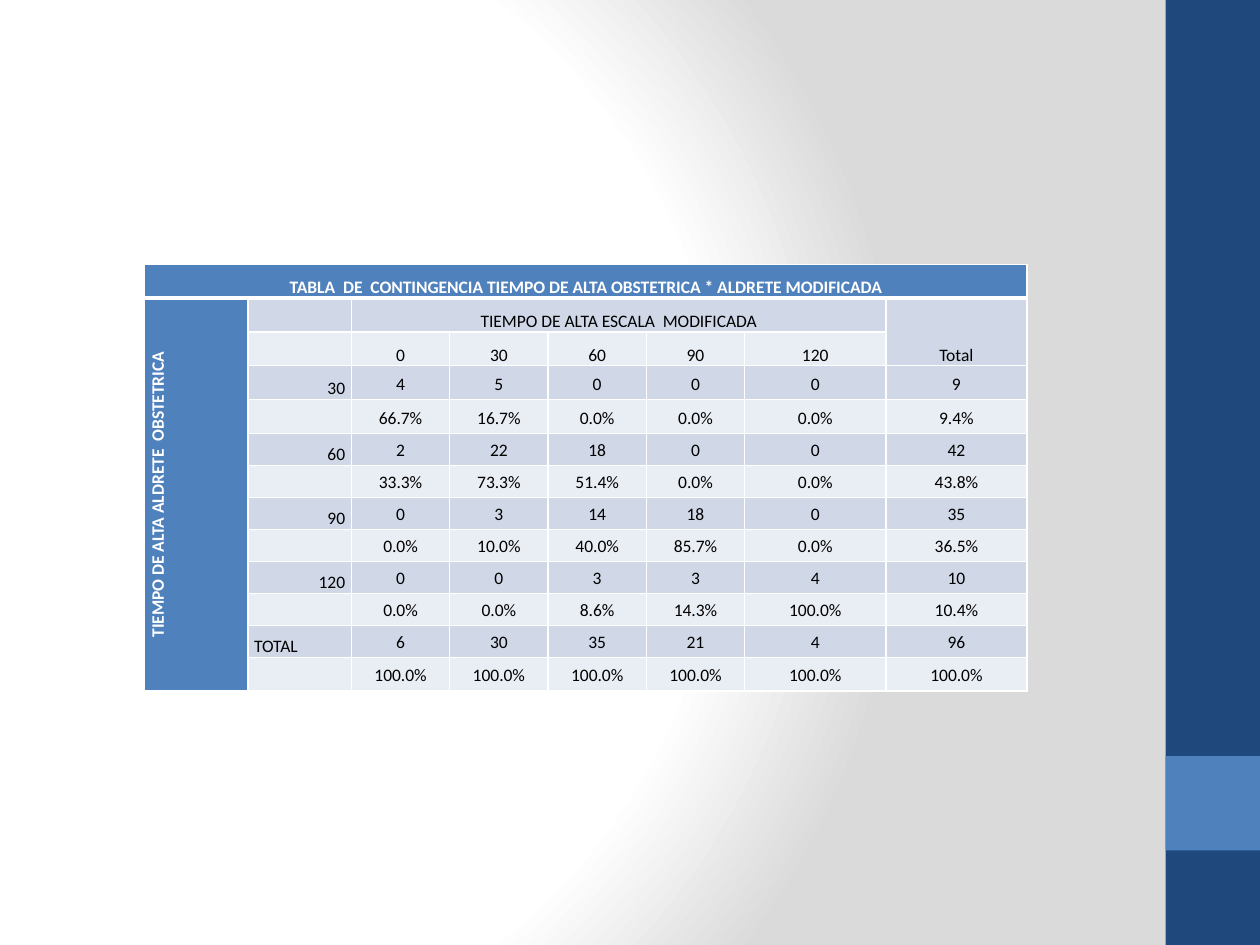
"""Build a slide with the contingency table of discharge times."""
import lxml.etree
import pptx
import pptx.dml.color
import pptx.enum.shapes
import pptx.enum.text
import pptx.oxml
import pptx.oxml.ns
import pptx.util

Pt = pptx.util.Pt
RGBColor = pptx.dml.color.RGBColor
Align = pptx.enum.text.PP_ALIGN
Anchor = pptx.enum.text.MSO_ANCHOR

WHITE = RGBColor(0xFF, 0xFF, 0xFF)
BLACK = RGBColor(0x00, 0x00, 0x00)
GREY = RGBColor(0xDA, 0xDA, 0xDA)
NAVY = RGBColor(0x1F, 0x49, 0x7D)
BLUE = RGBColor(0x4F, 0x81, 0xBD)
DARK_BAND = RGBColor(0xD0, 0xD8, 0xE8)
LIGHT_BAND = RGBColor(0xE9, 0xED, 0xF4)

TITLE = "TABLA  DE  CONTINGENCIA TIEMPO DE ALTA OBSTETRICA * ALDRETE MODIFICADA"
SIDE_TITLE = "TIEMPO DE ALTA ALDRETE  OBSTETRICA"
ROWS = [
    [TITLE, "", "", "", "", "", "", ""],
    [SIDE_TITLE, "", "TIEMPO DE ALTA ESCALA  MODIFICADA", "", "", "", "", "Total"],
    ["", "", "0", "30", "60", "90", "120", ""],
    ["", "30", "4", "5", "0", "0", "0", "9"],
    ["", "", "66.7%", "16.7%", "0.0%", "0.0%", "0.0%", "9.4%"],
    ["", "60", "2", "22", "18", "0", "0", "42"],
    ["", "", "33.3%", "73.3%", "51.4%", "0.0%", "0.0%", "43.8%"],
    ["", "90", "0", "3", "14", "18", "0", "35"],
    ["", "", "0.0%", "10.0%", "40.0%", "85.7%", "0.0%", "36.5%"],
    ["", "120", "0", "0", "3", "3", "4", "10"],
    ["", "", "0.0%", "0.0%", "8.6%", "14.3%", "100.0%", "10.4%"],
    ["", "TOTAL", "6", "30", "35", "21", "4", "96"],
    ["", "", "100.0%", "100.0%", "100.0%", "100.0%", "100.0%", "100.0%"],
]
COLUMN_WIDTHS = [59.2] * 2 + [56.2] * 4 + [80.7] * 2
ROW_HEIGHTS = [19.35] * 5 + [18.3] * 7 + [19.35]
MERGES = [(0, 0, 0, 7), (1, 0, 12, 0), (1, 2, 1, 6), (1, 7, 2, 7)]


def add_border(cell, side, width):
    properties = cell._tc.get_or_add_tcPr()
    line = lxml.etree.SubElement(
        properties, pptx.oxml.ns.qn(f"a:{side}"), w=str(Pt(width)))
    fill = lxml.etree.SubElement(line, pptx.oxml.ns.qn("a:solidFill"))
    lxml.etree.SubElement(fill, pptx.oxml.ns.qn("a:srgbClr"), val=str(WHITE))


presentation = pptx.Presentation()
presentation.slide_width = Pt(720)
presentation.slide_height = Pt(540)
slide = presentation.slides.add_slide(presentation.slide_layouts[6])

slide.background.fill.solid()
background = slide.background._cSld.bg.bgPr
stops = "".join(
    f'<a:gs pos="{position}"><a:srgbClr val="{color}"/></a:gs>'
    for position, color in [(0, WHITE), (75000, WHITE), (100000, GREY)])
gradient = pptx.oxml.parse_xml(
    f'<a:gradFill {pptx.oxml.ns.nsdecls("a")} rotWithShape="1">'
    f'<a:gsLst>{stops}</a:gsLst><a:path path="circle">'
    '<a:fillToRect l="20000" t="50000" r="100000" b="50000"/>'
    '</a:path></a:gradFill>')
background.replace(background[0], gradient)

for top, height, color in [(0, 540, NAVY), (432, 54, BLUE)]:
    band = slide.shapes.add_shape(
        pptx.enum.shapes.MSO_SHAPE.RECTANGLE, Pt(666), Pt(top), Pt(54), Pt(height))
    band.shadow.inherit = False
    band.fill.solid()
    band.fill.fore_color.rgb = color
    band.line.fill.background()

table = slide.shapes.add_table(
    len(ROWS), len(COLUMN_WIDTHS), Pt(82.4), Pt(151),
    Pt(sum(COLUMN_WIDTHS)), Pt(sum(ROW_HEIGHTS))).table
table.first_col = True
for column, width in zip(table.columns, COLUMN_WIDTHS):
    column.width = Pt(width)
for row, height in zip(table.rows, ROW_HEIGHTS):
    row.height = Pt(height)

for row_index, values in enumerate(ROWS):
    for column_index, value in enumerate(values):
        cell = table.cell(row_index, column_index)
        is_header = row_index == 0 or column_index == 0
        is_label = column_index == 1 and row_index > 2
        for side in ("lnL", "lnR", "lnT", "lnB"):
            touches_title = (row_index, side) in [(0, "lnB"), (1, "lnT")]
            add_border(cell, side, 3 if touches_title else 1)
        cell.fill.solid()
        band_color = DARK_BAND if row_index % 2 else LIGHT_BAND
        cell.fill.fore_color.rgb = BLUE if is_header else band_color
        cell.margin_left = cell.margin_right = Pt(3.6)
        cell.margin_top = cell.margin_bottom = Pt(0)
        at_bottom = is_header or is_label or row_index < 3
        cell.vertical_anchor = Anchor.BOTTOM if at_bottom else Anchor.MIDDLE
        cell.text = value
        paragraph = cell.text_frame.paragraphs[0]
        paragraph.alignment = Align.RIGHT if is_label else Align.CENTER
        if value == "TOTAL":
            paragraph.alignment = Align.LEFT
        paragraph.line_spacing = 1.15
        paragraph.font.name = "Calibri"
        paragraph.font.size = Pt(10)
        paragraph.font.bold = is_header
        paragraph.font.color.rgb = WHITE if is_header else BLACK

for first_row, first_column, last_row, last_column in MERGES:
    table.cell(first_row, first_column).merge(table.cell(last_row, last_column))
table.cell(1, 0)._tc.get_or_add_tcPr().set("vert", "vert270")

presentation.save("out.pptx")
